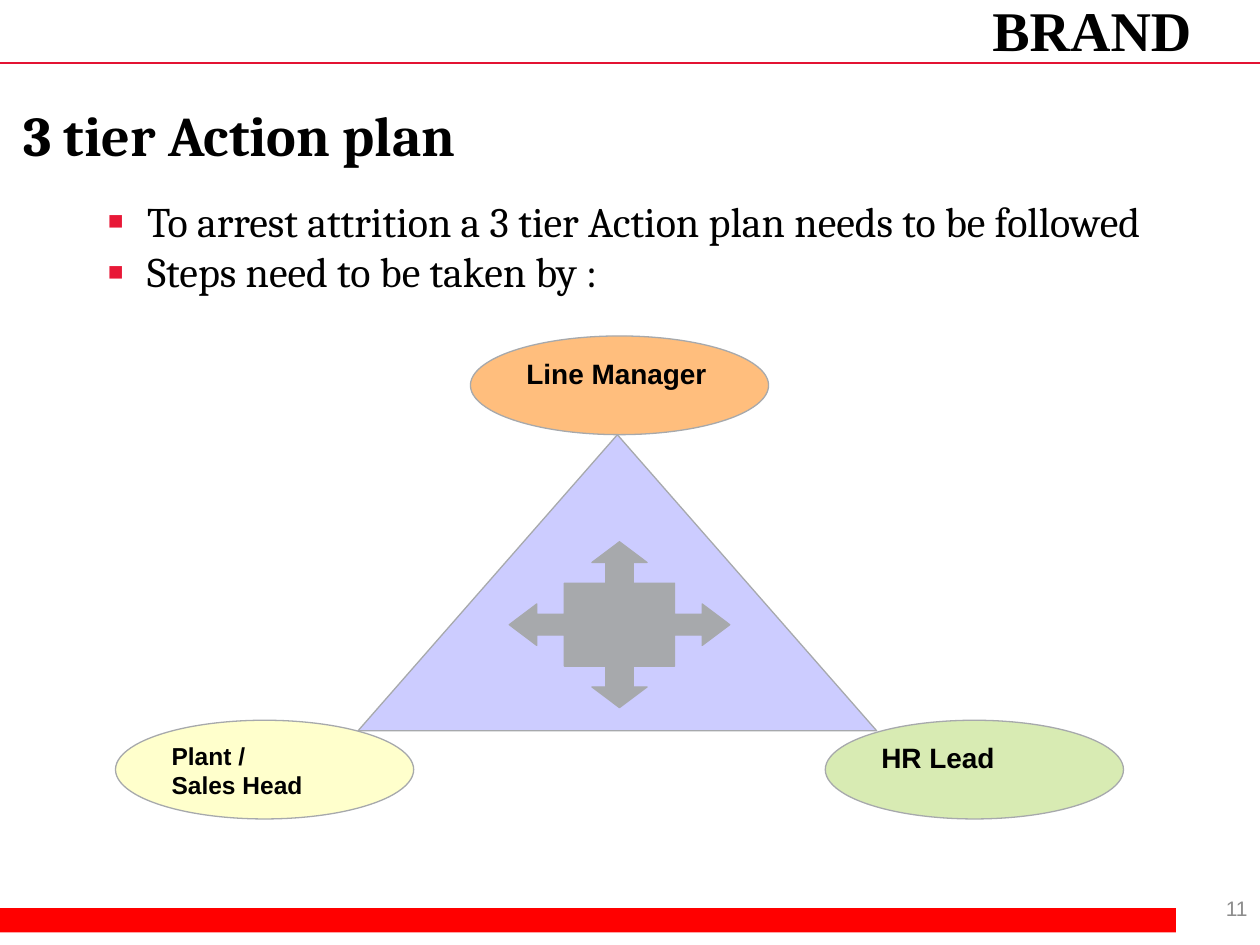
from dataclasses import dataclass

from lxml import etree
from pptx import Presentation
from pptx.dml.color import RGBColor
from pptx.enum.shapes import MSO_CONNECTOR, MSO_SHAPE
from pptx.enum.text import MSO_ANCHOR, MSO_AUTO_SIZE, PP_ALIGN
from pptx.oxml.ns import qn
from pptx.util import Emu, Inches, Pt

OVAL, TRIANGLE, RECTANGLE = MSO_SHAPE.OVAL, MSO_SHAPE.ISOSCELES_TRIANGLE, MSO_SHAPE.RECTANGLE
STRAIGHT = MSO_CONNECTOR.STRAIGHT
TOP, MIDDLE = MSO_ANCHOR.TOP, MSO_ANCHOR.MIDDLE
LEFT, CENTER, RIGHT = PP_ALIGN.LEFT, PP_ALIGN.CENTER, PP_ALIGN.RIGHT
NO_AUTOFIT = MSO_AUTO_SIZE.NONE

BLACK = RGBColor(0x00, 0x00, 0x00)
RED = RGBColor(0xFF, 0x00, 0x00)
RULE_RED = RGBColor(0xE3, 0x13, 0x32)
BULLET_RED = RGBColor(0xE8, 0x18, 0x37)
GRAY = RGBColor(0xA7, 0xA9, 0xAC)
NUMBER_GRAY = RGBColor(0x8C, 0x8C, 0x8C)
LAVENDER = RGBColor(0xCC, 0xCC, 0xFF)
YELLOW = RGBColor(0xFF, 0xFF, 0xCC)
ORANGE = RGBColor(0xFF, 0xBE, 0x7D)
GREEN = RGBColor(0xD8, 0xEB, 0xB3)

# Grid of 12 columns by 9 rows with square cells
SLIDE_WIDTH, SLIDE_HEIGHT = Inches(10), Inches(7.5)
COLUMNS = 12
CELL = SLIDE_WIDTH / COLUMNS


@dataclass(frozen=True)
class Box:
    column: float
    row: float
    columns: float
    rows: float

    def emu(self) -> list[Emu]:
        return [Emu(round(n * CELL)) for n in (self.column, self.row, self.columns, self.rows)]


@dataclass(frozen=True)
class Style:
    font: str
    size: float
    color: RGBColor = BLACK
    bold: bool = False


@dataclass(frozen=True)
class Tier:
    lines: tuple[str, ...]
    center_column: float
    row: float
    size: float
    fill: RGBColor


OVAL_COLUMNS, OVAL_ROWS = 2.84, 0.94
HUB_COLUMN, HUB_ROW = 5.9, 5.95
TIER_SPREAD = 3.38
TIERS = (
    Tier(("Plant /", "Sales Head"), HUB_COLUMN - TIER_SPREAD, 6.86, 14, YELLOW),
    Tier(("Line Manager",), HUB_COLUMN, 3.2, 16, ORANGE),
    Tier(("HR Lead",), HUB_COLUMN + TIER_SPREAD, 6.86, 16, GREEN),
)
STEPS = (
    "To arrest attrition a 3 tier Action plan needs to be followed",
    "Steps need to be taken by :",
)

# Upper arm of the four-way arrow, as shares of its half size
ARM = ((-0.5, -0.5), (-0.125, -0.5), (-0.125, -0.75), (-0.25, -0.75),
       (0, -1), (0.25, -0.75), (0.125, -0.75), (0.125, -0.5))


def add_run(paragraph, text: str, style: Style) -> None:
    run = paragraph.add_run()
    run.text = text
    run.font.name = style.font
    run.font.size = Pt(style.size)
    run.font.bold = style.bold
    run.font.color.rgb = style.color


def set_frame(frame, anchor=TOP):
    frame.word_wrap = True
    frame.auto_size = NO_AUTOFIT
    frame.vertical_anchor = anchor
    return frame


def add_text(slide, box: Box, text: str, style: Style, align, anchor=TOP) -> None:
    frame = set_frame(slide.shapes.add_textbox(*box.emu()).text_frame, anchor)
    frame.paragraphs[0].alignment = align
    add_run(frame.paragraphs[0], text, style)


def paint(shape, fill: RGBColor, outline: RGBColor) -> None:
    shape.shadow.inherit = False
    shape.fill.solid()
    shape.fill.fore_color.rgb = fill
    shape.line.color.rgb = outline
    shape.line.width = Pt(0.75)


def add_bullet(paragraph) -> None:
    properties = paragraph._p.get_or_add_pPr()
    indent = Inches(0.32)
    properties.set("marL", str(indent))
    properties.set("indent", str(-indent))
    color = etree.SubElement(properties, qn("a:buClr"))
    etree.SubElement(color, qn("a:srgbClr"), val=str(BULLET_RED))
    etree.SubElement(properties, qn("a:buSzPct"), val="120000")
    etree.SubElement(properties, qn("a:buFont"), typeface="Arial")
    etree.SubElement(properties, qn("a:buChar"), char="▪")


def add_rule(slide, row: float) -> None:
    y = Emu(round(row * CELL))
    rule = slide.shapes.add_connector(STRAIGHT, 0, y, SLIDE_WIDTH, y)
    rule.line.color.rgb = RULE_RED
    rule.line.width = Pt(0.75)
    etree.SubElement(rule._element.spPr, qn("a:effectLst"))


def add_tier(slide, tier: Tier) -> None:
    box = Box(tier.center_column - OVAL_COLUMNS / 2, tier.row, OVAL_COLUMNS, OVAL_ROWS)
    oval = slide.shapes.add_shape(OVAL, *box.emu())
    paint(oval, tier.fill, GRAY)
    paragraph = set_frame(oval.text_frame).paragraphs[0]
    paragraph.alignment = LEFT
    for index, line in enumerate(tier.lines):
        if index:
            paragraph.add_line_break()
        add_run(paragraph, line, Style("Arial", tier.size, bold=True))


def add_four_way_arrow(slide, half_columns: float, half_rows: float) -> None:
    outline, arm = [], ARM
    for _ in range(4):
        outline += arm
        arm = [(-y, x) for x, y in arm]
    points = [(round((HUB_COLUMN + x * half_columns) * CELL),
               round((HUB_ROW + y * half_rows) * CELL)) for x, y in outline]
    builder = slide.shapes.build_freeform(*points[0])
    builder.add_line_segments(points[1:], close=True)
    paint(builder.convert_to_shape(), GRAY, GRAY)


def main() -> None:
    presentation = Presentation()
    presentation.slide_width, presentation.slide_height = SLIDE_WIDTH, SLIDE_HEIGHT
    slide = presentation.slides.add_slide(presentation.slide_layouts[5])

    # Header and footer
    add_text(slide, Box(9.2, -0.1, 2.4, 0.7), "BRAND",
             Style("Times New Roman", 32, bold=True), CENTER)
    footer = slide.shapes.add_shape(RECTANGLE, *Box(0, 8.65, 11.2, 0.23).emu())
    paint(footer, RED, RED)
    footer.line.fill.background()
    add_rule(slide, 0.6)
    add_text(slide, Box(9.5, 8.35, 2.5, 0.6), "11",
             Style("Arial", 12, NUMBER_GRAY), RIGHT, MIDDLE)

    # Title
    title = slide.shapes.title
    title.left, title.top, title.width, title.height = Box(0.1, 0.9, 11.6, 1.1).emu()
    heading = set_frame(title.text_frame).paragraphs[0]
    heading.alignment = LEFT
    add_run(heading, "3 tier Action plan", Style("Cambria", 32, bold=True))

    # Steps
    steps = set_frame(slide.shapes.add_textbox(*Box(0.9, 1.8, 10.8, 5.8).emu()).text_frame)
    for index, step in enumerate(STEPS):
        paragraph = steps.add_paragraph() if index else steps.paragraphs[0]
        add_bullet(paragraph)
        add_run(paragraph, step, Style("Cambria", 24))

    # Triangle of the three tiers
    triangle = slide.shapes.add_shape(TRIANGLE, *Box(3.41, 4.14, 4.94, 2.82).emu())
    paint(triangle, LAVENDER, GRAY)
    for tier in TIERS:
        add_tier(slide, tier)
    add_four_way_arrow(slide, 1.05, 0.79)

    presentation.save("out.pptx")


if __name__ == "__main__":
    main()
